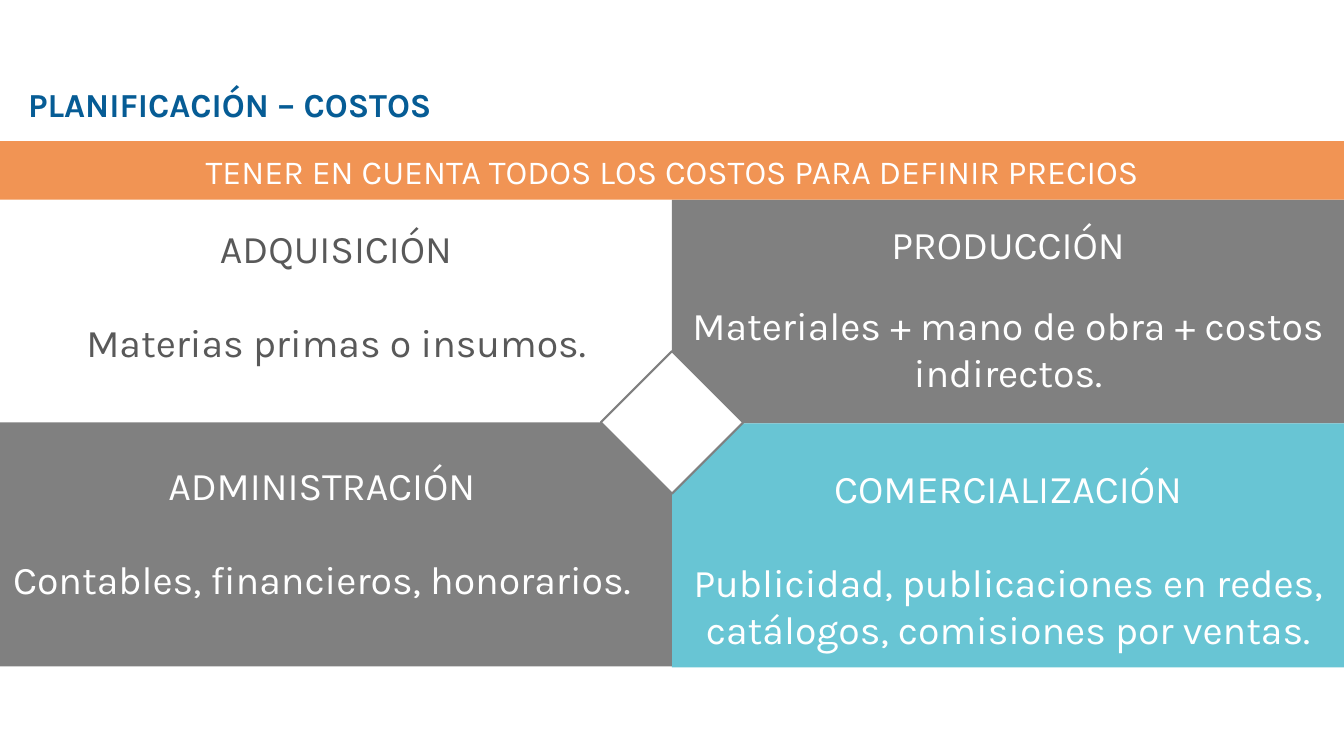
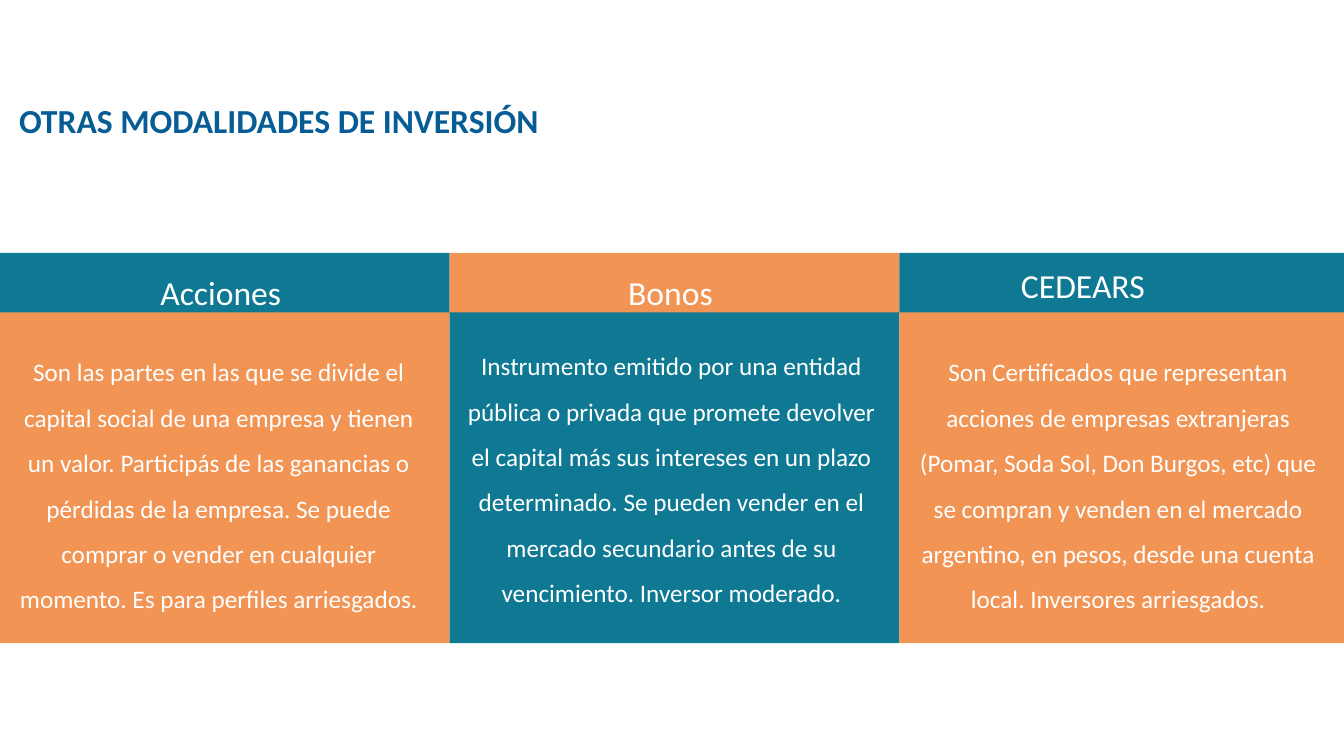
from pptx import Presentation
from pptx.dml.color import RGBColor
from pptx.enum import shapes, text
from pptx.util import Inches, Pt

WHITE = RGBColor(0xFF, 0xFF, 0xFF)
GRAY = RGBColor(0x80, 0x80, 0x80)
DARK_GRAY = RGBColor(0x59, 0x59, 0x59)
NAVY = RGBColor(0x06, 0x5C, 0x95)
ORANGE = RGBColor(0xF1, 0x94, 0x54)
AQUA = RGBColor(0x68, 0xC5, 0xD4)
TEAL = RGBColor(0x0F, 0x79, 0x94)

SLIDE_WIDTH = 13.33
HALF_WIDTH = SLIDE_WIDTH / 2
COLUMN_WIDTH = 4.46
KARLA = "Karla"
CALIBRI = "Calibri"


def add_rectangle(slide, left, top, width, height, color):
    shape = slide.shapes.add_shape(
        shapes.MSO_SHAPE.RECTANGLE,
        Inches(left), Inches(top), Inches(width), Inches(height))
    shape.shadow.inherit = False
    shape.fill.solid()
    shape.fill.fore_color.rgb = color
    shape.line.fill.background()
    return shape


def add_text(slide, left, top, width, height, lines, font_name, size,
             color=WHITE, bold=False, centered=True, line_spacing=None, gap=0):
    box = slide.shapes.add_textbox(
        Inches(left), Inches(top), Inches(width), Inches(height))
    frame = box.text_frame
    frame.word_wrap = True
    for index, line in enumerate(lines):
        paragraph = frame.add_paragraph() if index else frame.paragraphs[0]
        if centered:
            paragraph.alignment = text.PP_ALIGN.CENTER
        if line_spacing:
            paragraph.line_spacing = line_spacing
        if index:
            paragraph.space_before = Pt(gap)
        run = paragraph.add_run()
        run.text = line
        run.font.name = font_name
        run.font.size = Pt(size)
        run.font.bold = bold
        run.font.color.rgb = color
    return box


def add_title(slide, left, top, title, font_name):
    add_text(slide, left, top, 12.52, 0.5, [title], font_name, 24,
             color=NAVY, bold=True, centered=False)


def add_center_diamond(slide, center_x, center_y, side):
    diamond = add_rectangle(
        slide, center_x - side / 2, center_y - side / 2, side, side, WHITE)
    diamond.rotation = 45
    diamond.line.color.rgb = GRAY
    diamond.line.width = Pt(1.5)


def build_costs(slide):
    add_title(slide, 0.18, 0.78, "PLANIFICACIÓN – COSTOS", KARLA)
    for left, top, height, color in [
        (HALF_WIDTH, 1.98, 2.22, GRAY),
        (HALF_WIDTH, 4.2, 2.42, AQUA),
        (0, 4.19, 2.42, GRAY),
        ]:
        add_rectangle(slide, left, top, HALF_WIDTH, height, color)
    add_rectangle(slide, 0, 1.4, SLIDE_WIDTH, 0.58, ORANGE)
    add_text(slide, 0.36, 1.45, 12.61, 0.5,
             ["TENER EN CUENTA TODOS LOS COSTOS PARA DEFINIR PRECIOS"], KARLA, 24)
    add_center_diamond(slide, HALF_WIDTH, 4.19, 1)

    quadrants = [
        (0, 2.18, 1.51, DARK_GRAY, 33.5, "ADQUISICIÓN",
         "Materias primas o insumos."),
        (HALF_WIDTH, 2.14, 1.85, WHITE, 24, "PRODUCCIÓN",
         "Materiales + mano de obra + costos indirectos."),
        (-0.14, 4.53, 1.51, WHITE, 33.5, "ADMINISTRACIÓN",
         "Contables, financieros, honorarios."),
        (HALF_WIDTH, 4.56, 1.99, WHITE, 33.5, "COMERCIALIZACIÓN",
         "Publicidad, publicaciones en redes, catálogos, comisiones por ventas."),
    ]
    for left, top, height, color, gap, heading, detail in quadrants:
        add_text(slide, left, top, HALF_WIDTH, height, [heading, detail],
                 KARLA, 28, color=color, gap=gap)


def build_investments(slide):
    add_title(slide, 0.09, 0.94, "OTRAS MODALIDADES DE INVERSIÓN", CALIBRI)
    columns = [
        (TEAL, ORANGE, "Acciones", 1.44, 2.55, 0, 3.34,
         "Son las partes en las que se divide el capital social de una empresa "
         "y tienen un valor. Participás de las ganancias o pérdidas de la "
         "empresa. Se puede comprar o vender en cualquier momento. Es para "
         "perfiles arriesgados."),
        (ORANGE, TEAL, "Bonos", 5.9, 2.55, 4.49, 3.28,
         "Instrumento emitido por una entidad pública o privada que promete "
         "devolver el capital más sus intereses en un plazo determinado. Se "
         "pueden vender en el mercado secundario antes de su vencimiento. "
         "Inversor moderado."),
        (TEAL, ORANGE, "CEDEARS", 9.99, 2.48, 8.92, 3.34,
         "Son Certificados que representan acciones de empresas extranjeras "
         "(Pomar, Soda Sol, Don Burgos, etc) que se compran y venden en el "
         "mercado argentino, en pesos, desde una cuenta local. Inversores "
         "arriesgados."),
    ]
    for index, column in enumerate(columns):
        (header_color, body_color, heading, heading_left, heading_top,
         body_left, body_top, body) = column
        left = index * COLUMN_WIDTH
        width = min(COLUMN_WIDTH, SLIDE_WIDTH - left)
        add_rectangle(slide, left, 2.51, width, 0.6, header_color)
        add_rectangle(slide, left, 3.1, width, 3.28, body_color)
        add_text(slide, heading_left, heading_top, 1.5, 0.54, [heading],
                 CALIBRI, 24, line_spacing=1.25)
        add_text(slide, body_left, body_top, 4.34, 2.78, [body],
                 CALIBRI, 18, line_spacing=1.5)


def main():
    presentation = Presentation()
    presentation.slide_width = Inches(SLIDE_WIDTH)
    presentation.slide_height = Inches(7.5)
    blank_layout = presentation.slide_layouts[6]
    for build in (build_costs, build_investments):
        build(presentation.slides.add_slide(blank_layout))
    presentation.save("out.pptx")


if __name__ == "__main__":
    main()
